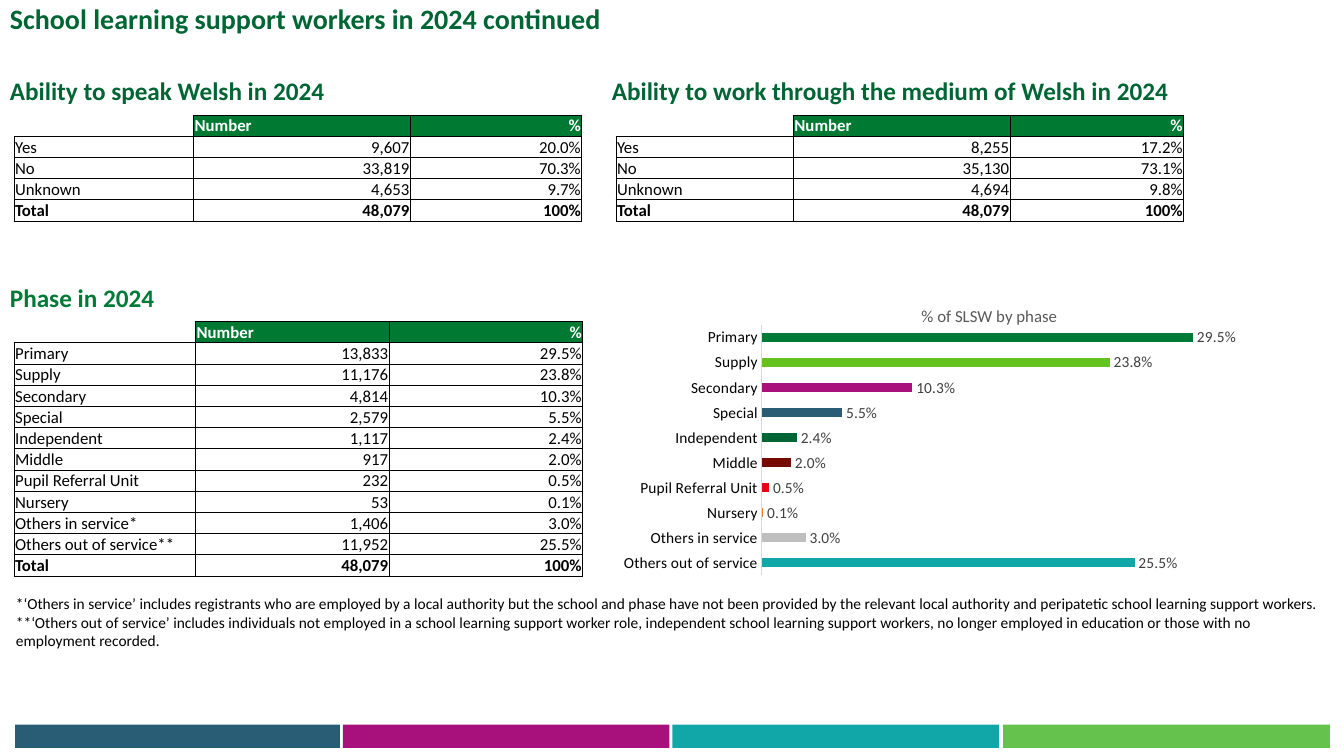
from lxml.etree import SubElement
from pptx import Presentation
from pptx.chart.data import CategoryChartData
from pptx.dml.color import RGBColor
from pptx.enum.chart import XL_CHART_TYPE, XL_LABEL_POSITION, XL_TICK_MARK
from pptx.enum.shapes import MSO_SHAPE
from pptx.enum.text import MSO_ANCHOR, PP_ALIGN
from pptx.oxml.ns import qn
from pptx.util import Pt

SCALE = 9144
FACE = "Calibri"
COLORS = {
    "black": "000000", "white": "FFFFFF", "head": "007A33", "green": "017A37",
    "forest": "006534", "lime": "65C21F", "leaf": "65C24C", "plum": "A8117C",
    "navy": "295D75", "maroon": "750A00", "red": "E30613", "orange": "ED7D31",
    "silver": "BFBFBF", "teal": "11A6A8", "axis": "D9D9D9", "label": "404040",
    "title": "595959",
}

BANDS = [(15, 322, "navy"), (340, 324, "plum"), (667, 324, "teal"), (995, 324, "leaf")]

HEADINGS = [
    ("School learning support workers in 2024 continued", (0, 0, 773, 34), 20, "forest", 0.9),
    ("Ability to speak Welsh in 2024", (0, 70, 332, 40), 18, "forest", 1),
    ("Ability to work through the medium of Welsh in 2024", (597, 70, 592, 40), 18, "forest", 1),
    ("Phase in 2024", (0, 279, 258, 37), 18, "green", 0.9),
]

NOTES = [
    "*‘Others in service’ includes registrants who are employed by a local authority but the school "
    "and phase have not been provided by the relevant local authority and peripatetic school "
    "learning support workers.",
    "**‘Others out of service’ includes individuals not employed in a school learning support worker "
    "role, independent school learning support workers, no longer employed in education or those "
    "with no employment recorded.",
]

HEAD = ("", "Number", "%")
TOTAL = ("Total", "48,079", "100%")
SPEAK = [("Yes", "9,607", "20.0%"), ("No", "33,819", "70.3%"), ("Unknown", "4,653", "9.7%")]
WORK = [("Yes", "8,255", "17.2%"), ("No", "35,130", "73.1%"), ("Unknown", "4,694", "9.8%")]
PHASES = [
    ("Primary", "13,833", 29.5, "green", ""),
    ("Supply", "11,176", 23.8, "lime", ""),
    ("Secondary", "4,814", 10.3, "plum", ""),
    ("Special", "2,579", 5.5, "navy", ""),
    ("Independent", "1,117", 2.4, "forest", ""),
    ("Middle", "917", 2.0, "maroon", ""),
    ("Pupil Referral Unit", "232", 0.5, "red", ""),
    ("Nursery", "53", 0.1, "orange", ""),
    ("Others in service", "1,406", 3.0, "silver", "*"),
    ("Others out of service", "11,952", 25.5, "teal", "**"),
]
TABLES = [
    (14, 114, 103, (178, 215, 170), SPEAK),
    (611, 114, 103, (176, 215, 172), WORK),
    (14, 319, 252, (180, 192, 192),
     [(name + mark, count, f"{share}%") for name, count, share, _, mark in PHASES]),
]


def px(*sizes):
    return [round(size * SCALE) for size in sizes]


def rgb(name):
    return RGBColor.from_string(COLORS[name])


def style(font, size, color, bold=False):
    font.name, font.size, font.bold = FACE, Pt(size), bold
    font.color.rgb = rgb(color)


def write(frame, *lines, size=12, color="black", bold=False, align=PP_ALIGN.LEFT, space=1):
    for i, line in enumerate(lines):
        para = frame.add_paragraph() if i else frame.paragraphs[0]
        para.alignment, para.line_spacing = align, space
        if line:
            run = para.add_run()
            run.text = line
            style(run.font, size, color, bold)
        else:
            SubElement(para._p, qn("a:endParaRPr"), sz=str(size * 100))


def add_text(box, *lines, **form):
    frame = slide.shapes.add_textbox(*px(*box)).text_frame
    frame.word_wrap = True
    write(frame, *lines, **form)


def add_edges(cell, sides):
    props = cell._tc.get_or_add_tcPr()
    for side in sides:
        line = SubElement(props, qn(f"a:ln{side}"), w=str(Pt(0.5)))
        fill = SubElement(line, qn("a:solidFill"))
        SubElement(fill, qn("a:srgbClr"), val=COLORS["black"])


def add_grid(left, top, height, widths, body):
    rows = [HEAD, *body, TOTAL]
    box = px(left, top, sum(widths), height)
    table = slide.shapes.add_table(len(rows), len(widths), *box).table
    table.first_row = table.horz_banding = False
    for col, width in zip(table.columns, px(*widths)):
        col.width = width
    for r, row in enumerate(rows):
        table.rows[r].height = px(height / len(rows))[0]
        for c, text in enumerate(row):
            cell = table.cell(r, c)
            cell.margin_left, cell.margin_right, cell.margin_top, cell.margin_bottom = px(1, 1, 1, 0)
            cell.vertical_anchor = MSO_ANCHOR.BOTTOM
            add_edges(cell, "LRTB" if text else "RB")
            if text and r == 0:
                cell.fill.solid()
                cell.fill.fore_color.rgb = rgb("head")
            else:
                cell.fill.background()
            right = c == 2 or (c == 1 and r > 0)
            write(cell.text_frame, text, color="black" if r else "white",
                  bold=row in (HEAD, TOTAL), align=PP_ALIGN.RIGHT if right else PP_ALIGN.LEFT)


def place(part, **spots):
    layout = part.find(qn("c:layout"))
    if layout is None:
        layout = SubElement(part, qn("c:layout"))
        part.insert(0, layout)
    manual = SubElement(layout, qn("c:manualLayout"))
    for tag, val in spots.items():
        SubElement(manual, qn(f"c:{tag}"), val=str(val))


def add_bars(box):
    data = CategoryChartData(number_format="0.0%")
    data.categories = [phase[0] for phase in PHASES]
    data.add_series("Series 1", [round(phase[2] / 100, 3) for phase in PHASES])
    chart = slide.shapes.add_chart(XL_CHART_TYPE.BAR_CLUSTERED, *px(*box), data).chart
    style(chart.font, 10, "black")
    chart.has_legend = False
    write(chart.chart_title.text_frame, "% of SLSW by phase", color="title", align=PP_ALIGN.CENTER)
    place(chart.chart_title._element, xMode="edge", yMode="edge", x=0.437, y=0.03)
    place(chart._chartSpace.chart.plotArea, layoutTarget="inner", xMode="edge", yMode="edge",
          x=0.222, y=0.111, w=0.702, h=0.868)
    names, scale = chart.category_axis, chart.value_axis
    names.reverse_order = True
    names.major_tick_mark = names.minor_tick_mark = XL_TICK_MARK.NONE
    style(names.tick_labels.font, 11, "black")
    names.format.line.color.rgb = rgb("axis")
    names.format.line.width = Pt(0.75)
    scale.minimum_scale, scale.maximum_scale = 0, 0.35
    scale.has_major_gridlines = scale.visible = False
    plot = chart.plots[0]
    plot.gap_width, plot.vary_by_categories = 182, False
    bars = plot.series[0]
    bars.format.fill.solid()
    bars.format.fill.fore_color.rgb = rgb("orange")
    for i, phase in enumerate(PHASES):
        fill = bars.points[i].format.fill
        fill.solid()
        fill.fore_color.rgb = rgb(phase[3])
    labels = bars.data_labels
    labels.show_value = True
    labels.position = XL_LABEL_POSITION.OUTSIDE_END
    labels.number_format, labels.number_format_is_linked = "0.0%", False
    style(labels.font, 11, "label")


deck = Presentation()
deck.slide_width, deck.slide_height = px(1333, 750)
slide = deck.slides.add_slide(deck.slide_layouts[6])
for left, width, color in BANDS:
    band = slide.shapes.add_shape(MSO_SHAPE.RECTANGLE, *px(left, 719, width, 23))
    band.shadow.inherit = False
    band.fill.solid()
    band.fill.fore_color.rgb = rgb(color)
    band.line.fill.background()
for text, box, size, color, space in HEADINGS:
    add_text(box, text, size=size, color=color, bold=True, space=space)
for grid in TABLES:
    add_grid(*grid)
add_bars((595, 291, 723, 286))
add_text((6, 585, 1321, 66), *NOTES, size=11)
deck.save("out.pptx")
